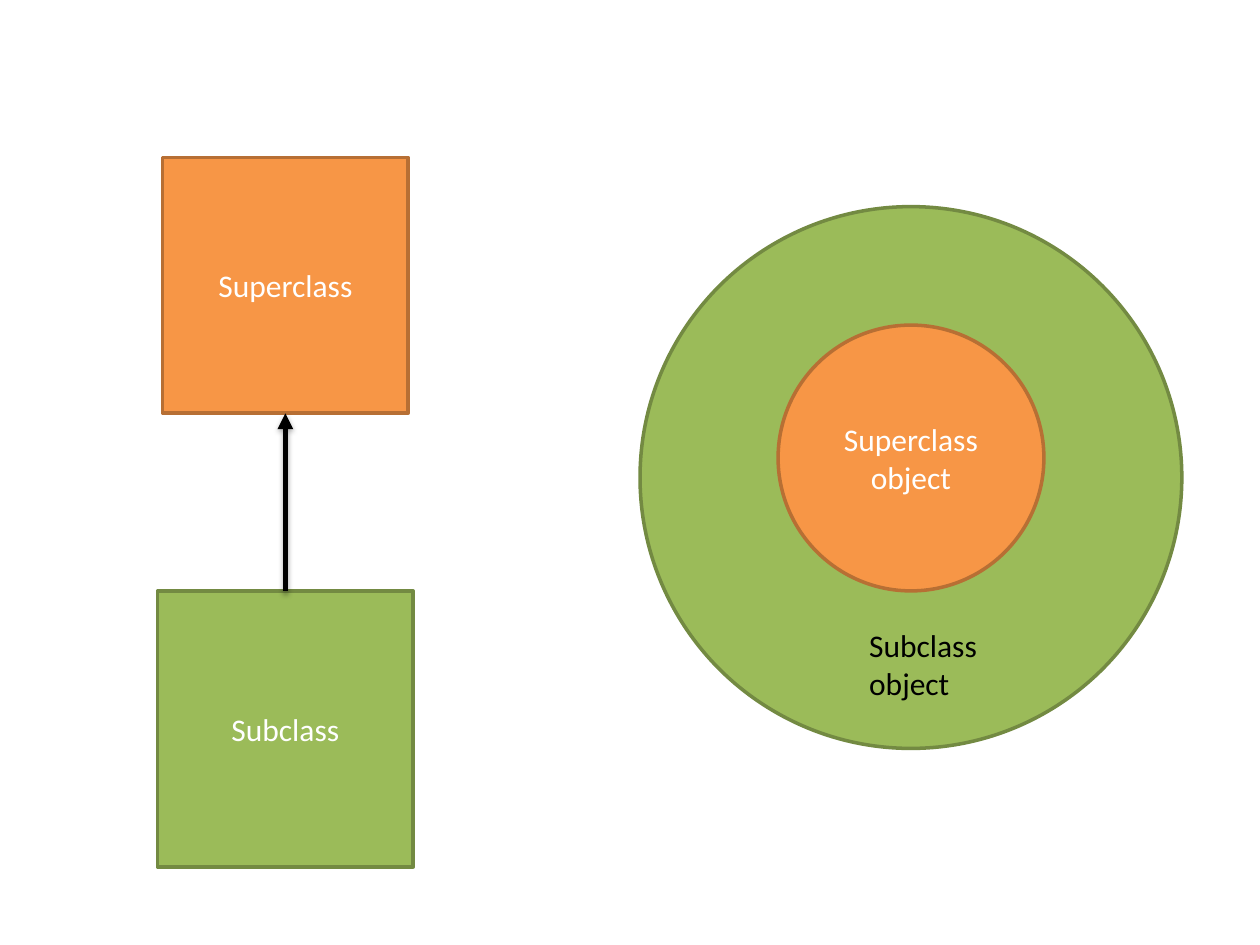
from dataclasses import dataclass

from lxml.etree import SubElement
from pptx import Presentation
from pptx.dml.color import RGBColor
from pptx.enum.shapes import MSO_CONNECTOR, MSO_SHAPE
from pptx.enum.text import MSO_ANCHOR as Anchor, PP_ALIGN as Align
from pptx.oxml.ns import qn
from pptx.util import Inches, Pt


@dataclass(frozen=True)
class Theme:
    font: str = "Calibri"
    text_size: int = 18
    outline_width: int = 2
    arrow_width: int = 3
    light: str = "FFFFFF"
    dark: str = "000000"
    superclass: tuple = ("F79646", "B76F34")  # fill, outline
    subclass: tuple = ("9BBB59", "738A42")


THEME = Theme()


def color(value):
    return RGBColor.from_string(value)


def write_text(shape, *lines, text_color=THEME.light, align=Align.CENTER,
               anchor=Anchor.MIDDLE, wrap=True):
    frame = shape.text_frame
    frame.word_wrap = wrap
    frame.vertical_anchor = anchor
    frame.text = "\n".join(lines)
    for paragraph in frame.paragraphs:
        paragraph.alignment = align
        font = paragraph.runs[0].font
        font.name = THEME.font
        font.size = Pt(THEME.text_size)
        font.color.rgb = color(text_color)


def add_figure(slide, kind, left, top, width, height, colors, label=None):
    shape = slide.shapes.add_shape(
        kind, Inches(left), Inches(top), Inches(width), Inches(height))
    fill, outline = colors
    shape.shadow.inherit = False
    shape.fill.solid()
    shape.fill.fore_color.rgb = color(fill)
    shape.line.color.rgb = color(outline)
    shape.line.width = Pt(THEME.outline_width)
    if label:
        write_text(shape, label)
    return shape


def add_inheritance_arrow(slide, child, parent):
    """Join the top of child to the bottom of parent with a shadowed arrow."""
    arrow = slide.shapes.add_connector(MSO_CONNECTOR.STRAIGHT, 0, 0, 0, 0)
    arrow.begin_connect(child, 0)
    arrow.end_connect(parent, 2)
    arrow.line.color.rgb = color(THEME.dark)
    arrow.line.width = Pt(THEME.arrow_width)
    SubElement(arrow.line._get_or_add_ln(), qn("a:tailEnd"), type="triangle")
    properties = arrow._element.spPr
    effects = SubElement(properties, qn("a:effectLst"))
    shadow = SubElement(effects, qn("a:outerShdw"), blurRad=str(Pt(3.1)),
                        dist=str(Pt(1.8)), dir="5400000", rotWithShape="0")
    shade = SubElement(shadow, qn("a:srgbClr"), val=THEME.dark)
    SubElement(shade, qn("a:alpha"), val="35000")


def add_class_diagram(slide, left, top, width, height):
    parent_width, parent_height, child_height = 1.95, 2.03, 2.19
    parent = add_figure(slide, MSO_SHAPE.RECTANGLE,
                        left + (width - parent_width) / 2, top,
                        parent_width, parent_height,
                        THEME.superclass, "Superclass")
    child = add_figure(slide, MSO_SHAPE.RECTANGLE,
                       left, top + height - child_height, width, child_height,
                       THEME.subclass, "Subclass")
    add_inheritance_arrow(slide, child, parent)


def add_object_diagram(slide, left, top, size):
    """Draw the superclass object nested inside the subclass object."""
    inner_size = 2.11
    add_figure(slide, MSO_SHAPE.OVAL, left, top, size, size, THEME.subclass)
    add_figure(slide, MSO_SHAPE.OVAL,
               left + (size - inner_size) / 2, top + 0.94,
               inner_size, inner_size, THEME.superclass, "Superclass object")
    label = slide.shapes.add_textbox(
        Inches(left + 1.72), Inches(top + 3.28), Inches(1.07), Inches(0.71))
    write_text(label, "Subclass", "object", text_color=THEME.dark,
               align=Align.LEFT, anchor=Anchor.TOP, wrap=False)


def main():
    presentation = Presentation()
    presentation.slide_width = Inches(10)
    presentation.slide_height = Inches(7.5)
    blank_layout = presentation.slide_layouts[6]
    slide = presentation.slides.add_slide(blank_layout)
    add_class_diagram(slide, 1.25, 1.25, 2.03, 5.63)
    add_object_diagram(slide, 5.08, 1.64, 4.3)
    presentation.save("out.pptx")


if __name__ == "__main__":
    main()
